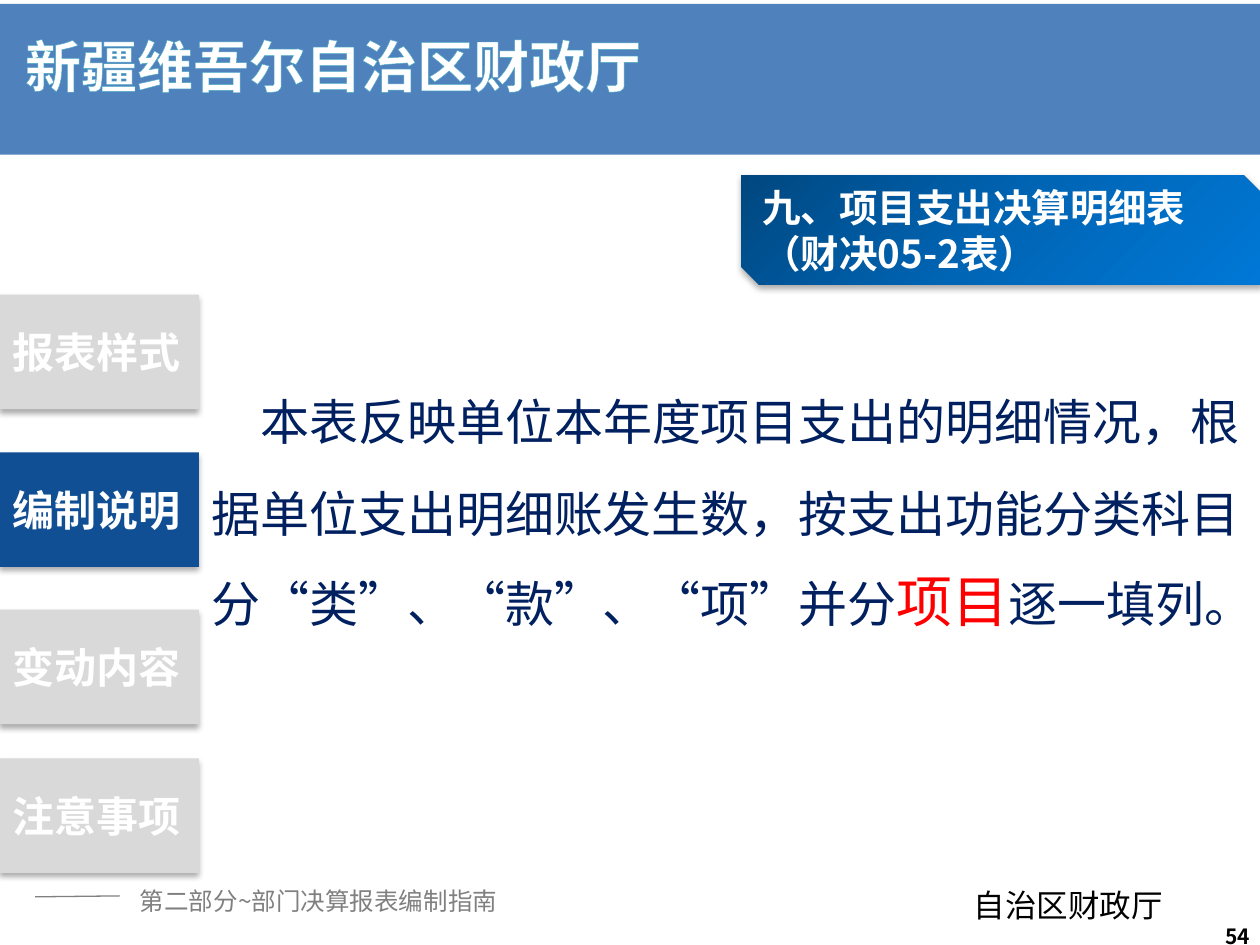
from dataclasses import dataclass

from lxml import etree
from pptx import Presentation
from pptx.dml.color import RGBColor
from pptx.enum.shapes import MSO_CONNECTOR, MSO_SHAPE
from pptx.enum.text import MSO_ANCHOR as Anchor, MSO_AUTO_SIZE as AutoSize, PP_ALIGN as Align
from pptx.oxml import parse_xml
from pptx.oxml.ns import nsdecls, qn
from pptx.util import Cm, Pt


@dataclass(frozen=True)
class Theme:
    font: str = "Noto Sans CJK SC"
    band: str = "4F81BD"
    outline: str = "4BACC6"
    active: str = "114F95"
    inactive: str = "D9D9D9"
    white: str = "FFFFFF"
    black: str = "000000"
    gray: str = "808080"
    body: str = "002060"
    accent: str = "FF0000"
    gradient: tuple = ((0, "00477F"), (50, "0065B5"), (100, "0078D7"))
    header_size: int = 32
    body_size: int = 28
    accent_size: int = 32
    tab_size: int = 24
    topic_size: int = 22
    source_size: int = 18
    footer_size: int = 14
    number_size: int = 12


THEME = Theme()


def rgb(value):
    return RGBColor.from_string(value)


def place(shape, left, top, width, height):
    shape.left, shape.top = Cm(left), Cm(top)
    shape.width, shape.height = Cm(width), Cm(height)


def add_run(paragraph, text, size, color, bold=False):
    run = paragraph.add_run()
    run.text = text
    font = run.font
    font.name, font.size, font.bold = THEME.font, Pt(size), bold
    font.color.rgb = rgb(color)
    east_asian = etree.SubElement(run._r.get_or_add_rPr(), qn("a:ea"))
    east_asian.set("typeface", THEME.font)
    return run


def write(shape, *lines, size, color, bold=False, align=Align.LEFT,
          anchor=Anchor.TOP, spacing=None, wrap=True):
    """Fill a shape with one paragraph per line; spacing is in points."""
    frame = shape.text_frame
    frame.word_wrap = wrap
    frame.auto_size = AutoSize.NONE
    frame.vertical_anchor = anchor
    for index, line in enumerate(lines):
        paragraph = frame.add_paragraph() if index else frame.paragraphs[0]
        paragraph.alignment = align
        paragraph.space_before = Pt(0)
        if spacing:
            paragraph.line_spacing = Pt(spacing)
        add_run(paragraph, line, size, color, bold)
    return frame


def add_label(slide, box, text, **format):
    label = slide.shapes.add_textbox(*map(Cm, box))
    write(label, text, **format)


def add_panel(slide, kind, box, color=None):
    panel = slide.shapes.add_shape(kind, *map(Cm, box))
    panel.shadow.inherit = False
    panel.line.fill.background()
    if color:
        panel.fill.solid()
        panel.fill.fore_color.rgb = rgb(color)
    return panel


def add_soft_shadow(shape):
    effects = shape._element.spPr.find(qn("a:effectLst"))
    effects.append(parse_xml(
        f'<a:outerShdw {nsdecls("a")} blurRad="{Pt(3.5)}" dist="{Pt(2.2)}" dir="5400000" '
        f'rotWithShape="0"><a:srgbClr val="{THEME.black}"><a:alpha val="32000"/>'
        '</a:srgbClr></a:outerShdw>'))


def fill_gradient(shape, stops):
    shape.fill.gradient()
    shape.fill.gradient_angle = 315
    stop_list = shape._element.spPr.find(qn("a:gradFill")).find(qn("a:gsLst"))
    for stop in list(stop_list):
        stop_list.remove(stop)
    for position, color in stops:
        stop_list.append(parse_xml(
            f'<a:gs {nsdecls("a")} pos="{position * 1000}"><a:srgbClr val="{color}"/></a:gs>'))


def add_header(slide):
    for box in ((0, 0.58, 25.4, 2.54), (0, 0.08, 25.4, 2.21)):
        add_panel(slide, MSO_SHAPE.RECTANGLE, box, THEME.band)
    title = slide.shapes.title
    slide.shapes._spTree.append(title._element)  # in front of the bands
    place(title, 0.25, 0.38, 14.38, 1.63)
    frame = write(title, "新疆维吾尔自治区财政厅", size=THEME.header_size,
                  color=THEME.white, bold=True, spacing=42)
    properties = frame.paragraphs[0].runs[0]._r.get_or_add_rPr()
    properties.insert(0, parse_xml(
        f'<a:ln {nsdecls("a")} w="{Pt(0.8)}"><a:solidFill>'
        f'<a:srgbClr val="{THEME.outline}"/></a:solidFill></a:ln>'))


def add_body(slide):
    body = slide.placeholders[1]
    place(body, 4.01, 5.64, 21.36, 13.56)
    frame = write(
        body,
        "本表反映单位本年度项目支出的明细情况，根据单位支出明细账发生数，"
        "按支出功能分类科目分“类”、“款”、“项”并分",
        size=THEME.body_size, color=THEME.body, spacing=52.5)
    frame.margin_top = Cm(1.58)
    paragraph = frame.paragraphs[0]
    add_run(paragraph, "项目", THEME.accent_size, THEME.accent)
    add_run(paragraph, "逐一填列。", THEME.body_size, THEME.body)
    properties = paragraph._p.get_or_add_pPr()
    properties.set("marL", "0")
    properties.set("indent", str(Cm(0.99)))
    etree.SubElement(properties, qn("a:buNone"))


def add_topic(slide):
    topic = add_panel(slide, MSO_SHAPE.SNIP_2_DIAG_RECTANGLE, (14.94, 3.53, 10.49, 2.21))
    fill_gradient(topic, THEME.gradient)
    add_soft_shadow(topic)
    write(topic, "九、项目支出决算明细表", "（财决05-2表）", size=THEME.topic_size,
          color=THEME.white, bold=True, anchor=Anchor.MIDDLE, spacing=26.5)


def add_tabs(slide, active):
    tabs = {"报表样式": 5.94, "编制说明": 9.12, "变动内容": 12.29, "注意事项": 15.29}
    for text, top in tabs.items():
        color = THEME.active if text == active else THEME.inactive
        tab = add_panel(slide, MSO_SHAPE.RECTANGLE, (0, top, 4.01, 2.31), color)
        add_soft_shadow(tab)
        write(tab, text, size=THEME.tab_size, color=THEME.white, bold=True,
              anchor=Anchor.MIDDLE)


def add_footer(slide):
    rule = slide.shapes.add_connector(
        MSO_CONNECTOR.STRAIGHT, Cm(0.71), Cm(18.08), Cm(2.41), Cm(18.06))
    rule.line.color.rgb = rgb(THEME.gray)
    rule.line.width = Pt(0.75)
    etree.SubElement(rule._element.spPr, qn("a:effectLst"))
    add_label(slide, (2.57, 17.73, 7.82, 0.86), "第二部分~部门决算报表编制指南",
              size=THEME.footer_size, color=THEME.gray, spacing=17)
    add_label(slide, (19.38, 17.68, 4.32, 1.02), "自治区财政厅",
              size=THEME.source_size, color=THEME.black, spacing=23, wrap=False)
    add_label(slide, (19.53, 18.36, 5.92, 1.02), "54", size=THEME.number_size,
              color=THEME.black, bold=True, align=Align.RIGHT, anchor=Anchor.MIDDLE)


def main():
    presentation = Presentation()
    presentation.slide_width, presentation.slide_height = Cm(25.4), Cm(19.05)
    slide = presentation.slides.add_slide(presentation.slide_layouts[1])
    add_header(slide)
    add_body(slide)
    add_topic(slide)
    add_tabs(slide, active="编制说明")
    add_footer(slide)
    presentation.save("out.pptx")


if __name__ == "__main__":
    main()
